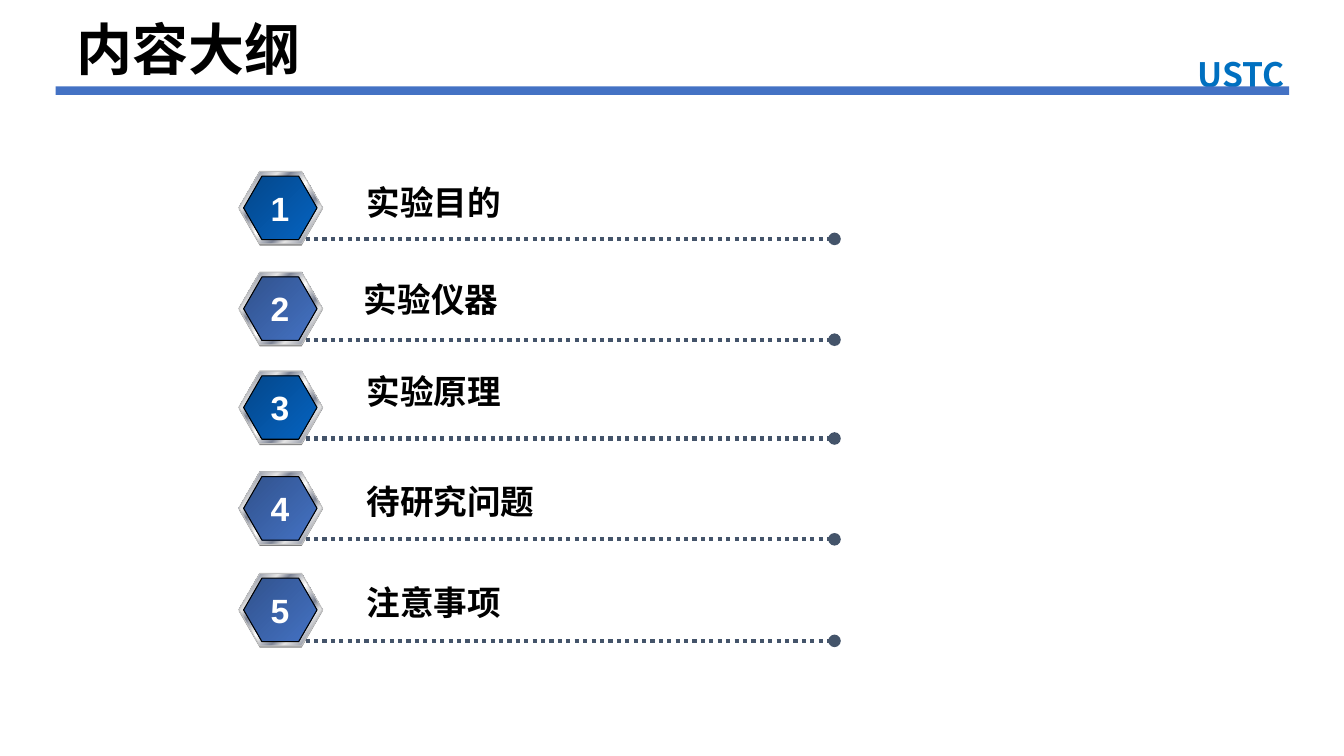
from dataclasses import dataclass

from lxml import etree
from pptx import Presentation
from pptx.dml.color import RGBColor
from pptx.enum.dml import MSO_LINE
from pptx.enum.shapes import MSO_CONNECTOR, MSO_SHAPE
from pptx.enum.text import MSO_ANCHOR, MSO_AUTO_SIZE, PP_ALIGN
from pptx.oxml.ns import qn
from pptx.util import Cm, Pt

HEXAGON = MSO_SHAPE.HEXAGON
RECTANGLE = MSO_SHAPE.RECTANGLE
STRAIGHT = MSO_CONNECTOR.STRAIGHT
DOTTED = MSO_LINE.ROUND_DOT
TOP = MSO_ANCHOR.TOP
NO_FIT = MSO_AUTO_SIZE.NONE
LEFT = PP_ALIGN.LEFT
CENTER = PP_ALIGN.CENTER


@dataclass(frozen=True)
class Theme:
    latin: str = "Arial"
    chinese: str = "Noto Sans CJK SC"
    title_size: int = 40
    text_size: int = 24
    black: str = "000000"
    white: str = "FFFFFF"
    mark: str = "0070C0"
    bar: str = "4472C4"
    dots: str = "44546A"
    shade: str = "808080"
    rim: str = "C0C0C0"
    navy: tuple = ((0, "04478A"), (100, "0563C1"))
    indigo: tuple = ((0, "31528C"), (100, "4472C4"))
    metal: tuple = (
        (0, "E6E6E6"), (8, "7D8496"), (26, "E6E6E6"), (34, "7D8496"),
        (46, "E6E6E6"), (50, "FFFFFF"), (54, "E6E6E6"), (66, "7D8496"),
        (74, "E6E6E6"), (92, "7D8496"), (100, "E6E6E6"),
    )


THEME = Theme()

ITEMS = [
    ("实验目的", THEME.latin, THEME.navy, 4.32, 8.99, 0.15),
    ("实验仪器", THEME.chinese, THEME.indigo, 6.86, 8.92, 0.05),
    ("实验原理", THEME.chinese, THEME.navy, 9.35, 8.99, -0.13),
    ("待研究问题", THEME.chinese, THEME.indigo, 11.89, 8.99, 0.1),
    ("注意事项", THEME.chinese, THEME.indigo, 14.45, 8.99, 0.1),
]


def color(value):
    return RGBColor.from_string(value)


def write(shape, text, size, ink, font, align=LEFT, wrap=False):
    frame = shape.text_frame
    frame_format = {"word_wrap": wrap, "auto_size": NO_FIT, "vertical_anchor": TOP}
    for name, value in frame_format.items():
        setattr(frame, name, value)
    para = frame.paragraphs[0]
    para.alignment = align
    para.line_spacing = 1.0
    span = para.add_run()
    span.text = text
    span_format = {"size": Pt(size), "bold": True, "name": font}
    for name, value in span_format.items():
        setattr(span.font, name, value)
    span.font.color.rgb = color(ink)
    east_asian = etree.Element(qn("a:ea"), typeface=THEME.chinese)
    span.font._element.find(qn("a:latin")).addnext(east_asian)
    return span


def add_text(shapes, box, *args, **options):
    return write(shapes.add_textbox(*map(Cm, box)), *args, **options)


def fill_gradient(shape, stops):
    shape.fill.gradient()
    shape.fill.gradient_angle = 315
    stop_list = shape._element.spPr.find(qn("a:gradFill")).find(qn("a:gsLst"))
    for stop in list(stop_list):
        stop_list.remove(stop)
    for position, value in stops:
        stop = etree.SubElement(stop_list, qn("a:gs"), pos=str(position * 1000))
        etree.SubElement(stop, qn("a:srgbClr"), val=value)


def add_solid(shapes, kind, box, fill):
    shape = shapes.add_shape(kind, *map(Cm, box))
    shape.shadow.inherit = False
    shape.fill.solid()
    shape.fill.fore_color.rgb = color(fill)
    shape.line.fill.background()
    return shape


def add_hexagon(shapes, box, fill, stops=None, edge=None):
    hexagon = add_solid(shapes, HEXAGON, box, fill)
    hexagon.adjustments[0] = 0.289
    hexagon.adjustments[1] = 1.1547
    if stops:
        fill_gradient(hexagon, stops)
        hexagon.line.color.rgb = color(edge)
        hexagon.line.width = Pt(0.75)


def add_dotted_line(shapes, left, right, top):
    line = shapes.add_connector(STRAIGHT, Cm(left), Cm(top), Cm(right), Cm(top))
    line.line.color.rgb = color(THEME.dots)
    line.line.width = Pt(3)
    line.line.dash_style = DOTTED
    outline = line._element.spPr.find(qn("a:ln"))
    etree.SubElement(outline, qn("a:tailEnd"), type="oval")
    etree.SubElement(line._element.spPr, qn("a:effectLst"))


def add_header(page, left, top, width):
    mark = add_text(page.shapes, (28.68, top + 1.01, 5.18, 1.27), "USTC",
                    THEME.text_size, THEME.mark, THEME.chinese, CENTER, True)
    outline = etree.Element(qn("a:ln"), w=str(Pt(0.75)))
    fill = etree.SubElement(outline, qn("a:solidFill"))
    etree.SubElement(fill, qn("a:srgbClr"), val=THEME.white)
    mark.font._element.insert(0, outline)
    add_solid(page.shapes, RECTANGLE, (left, top + 1.95, width, 0.21), THEME.bar)
    title = page.shapes.title
    place = {"left": left + 0.28, "top": top, "width": 6.6, "height": 1.96}
    for name, value in place.items():
        setattr(title, name, Cm(value))
    write(title, "内容大纲", THEME.title_size, THEME.black, THEME.chinese)


def add_item(page, number, item, left, width):
    text, font, stops, top, label_left, label_shift = item
    shapes = page.shapes.add_group_shape().shapes
    add_hexagon(shapes, (left, top + 0.04, 2.11, 1.83), THEME.shade)
    add_hexagon(shapes, (left, top, 2.11, 1.83), THEME.rim, THEME.metal, THEME.rim)
    add_hexagon(shapes, (left + 0.12, top + 0.12, 1.85, 1.6), THEME.bar, stops, THEME.black)
    add_dotted_line(shapes, left + 1.68, left + width, top + 1.7)
    label_box = (label_left, top + label_shift, 0.64 + 0.83 * len(text), 1.3)
    add_text(shapes, label_box, text, THEME.text_size, THEME.black, font)
    add_text(shapes, (left + 0.54, top + 0.28, 0.99, 1.28), str(number),
             THEME.text_size, THEME.white, THEME.latin, CENTER)


def add_outline_page(deck):
    page = deck.slides.add_slide(deck.slide_layouts[5])
    add_header(page, 1.4, 0.23, 31.09)
    for number, item in enumerate(ITEMS, 1):
        add_item(page, number, item, 6.02, 15.01)


def main():
    deck = Presentation()
    deck.slide_width = Cm(33.87)
    deck.slide_height = Cm(19.05)
    add_outline_page(deck)
    deck.save("out.pptx")


if __name__ == "__main__":
    main()
